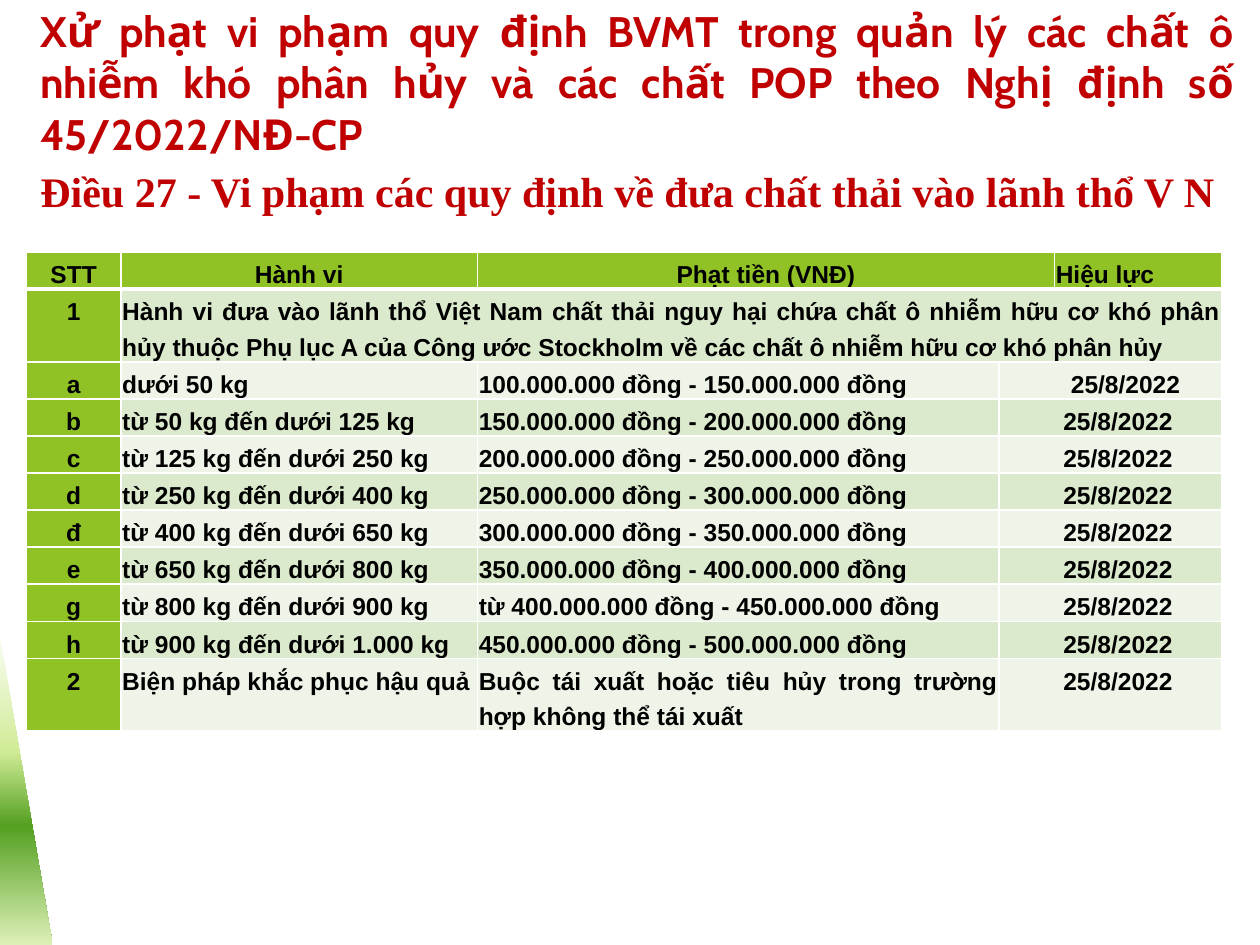
from dataclasses import dataclass

from lxml import etree
from pptx import Presentation
from pptx.dml.color import RGBColor
from pptx.enum.shapes import MSO_SHAPE
from pptx.enum.text import MSO_ANCHOR, MSO_AUTO_SIZE, PP_ALIGN
from pptx.oxml.ns import qn
from pptx.util import Inches, Pt

RIGHT_TRIANGLE = MSO_SHAPE.RIGHT_TRIANGLE
TOP, MIDDLE = MSO_ANCHOR.TOP, MSO_ANCHOR.MIDDLE
NO_AUTOFIT = MSO_AUTO_SIZE.NONE
LEFT, CENTER, JUSTIFY = PP_ALIGN.LEFT, PP_ALIGN.CENTER, PP_ALIGN.JUSTIFY


@dataclass(frozen=True)
class Theme:
    heading: str = "C00000"
    ink: str = "000000"
    line: str = "FFFFFF"
    accent: str = "90C226"
    bands: tuple = ("DBE9CD", "EEF4E8")
    fade: tuple = ((0, "FAFDF3"), (37, "D0EB96"), (61, "54A021"), (100, "DFF1B9"))
    decree_font: str = "Cabin"
    article_font: str = "Times New Roman"
    table_font: str = "Arial"
    decree_size: float = 24.4
    article_size: float = 24
    table_size: float = 14


class SlideBuilder:
    def __init__(self, slide, theme):
        self.slide = slide
        self.theme = theme

    def fill_text(self, frame, text, font_name, size, color, align, spacing=1.0):
        frame.text = text
        frame.word_wrap = True
        paragraph = frame.paragraphs[0]
        paragraph.alignment = align
        paragraph.line_spacing = spacing
        font = paragraph.runs[0].font
        font.name = font_name
        font.size = Pt(size)
        font.bold = True
        font.color.rgb = RGBColor.from_string(color)
        return paragraph

    def title(self, text, left, top, width, height):
        title = self.slide.shapes.title
        title.left, title.top = Inches(left), Inches(top)
        title.width, title.height = Inches(width), Inches(height)
        frame = title.text_frame
        frame.auto_size = NO_AUTOFIT
        frame.vertical_anchor = MIDDLE
        self.fill_text(frame, text, self.theme.article_font, self.theme.article_size,
                       self.theme.heading, LEFT, 0.9)

    def text(self, text, left, top, width, height):
        box = self.slide.shapes.add_textbox(
            Inches(left), Inches(top), Inches(width), Inches(height))
        box.text_frame.vertical_anchor = TOP
        self.fill_text(box.text_frame, text, self.theme.decree_font,
                       self.theme.decree_size, self.theme.heading, JUSTIFY)

    def corner(self, left, top, width, height):
        corner = self.slide.shapes.add_shape(
            RIGHT_TRIANGLE, Inches(left), Inches(top), Inches(width), Inches(height))
        corner.shadow.inherit = False
        corner.line.fill.background()
        corner.fill.gradient()
        corner.fill.gradient_angle = 270
        stops = corner.element.spPr.find(qn("a:gradFill")).find(qn("a:gsLst"))
        for stop in list(stops):
            stops.remove(stop)
        for percent, color in self.theme.fade:
            stop = etree.SubElement(stops, qn("a:gs"), pos=str(percent * 1000))
            etree.SubElement(stop, qn("a:srgbClr"), val=color)

    def table(self, left, top, widths, heights):
        frame = self.slide.shapes.add_table(
            len(heights), len(widths), Inches(left), Inches(top),
            Inches(sum(widths)), Inches(sum(heights)))
        table = frame.table
        for column, width in zip(table.columns, widths):
            column.width = Inches(width)
        for row, height in zip(table.rows, heights):
            row.height = Inches(height)
        for index, row in enumerate(table.rows):
            band = self.theme.bands[(index - 1) % 2]
            for column, cell in enumerate(row.cells):
                is_accent = index == 0 or column == 0
                self.borders(cell, top=3 if index == 1 else 1,
                             bottom=3 if index == 0 else 1)
                cell.fill.solid()
                cell.fill.fore_color.rgb = RGBColor.from_string(
                    self.theme.accent if is_accent else band)
        return table

    def borders(self, cell, top, bottom):
        properties = cell._tc.get_or_add_tcPr()
        for side, points in (("L", 1), ("R", 1), ("T", top), ("B", bottom)):
            edge = etree.SubElement(properties, qn(f"a:ln{side}"), w=str(Pt(points)))
            fill = etree.SubElement(edge, qn("a:solidFill"))
            etree.SubElement(fill, qn("a:srgbClr"), val=self.theme.line)

    def cell(self, table, row, column, text, align, span=1, indent=0):
        cell = table.cell(row, column)
        if span > 1:
            cell.merge(table.cell(row, column + span - 1))
        cell.margin_left = cell.margin_right = cell.margin_top = Inches(0.01)
        cell.margin_bottom = 0
        paragraph = self.fill_text(cell.text_frame, text, self.theme.table_font,
                                   self.theme.table_size, self.theme.ink, align, 1.3)
        if indent:
            paragraph._p.get_or_add_pPr().set("indent", str(Inches(indent)))


DECREE = ("Xử phạt vi phạm quy định BVMT trong quản lý các chất ô nhiễm khó phân hủy "
          "và các chất POP theo Nghị định số 45/2022/NĐ-CP")
ARTICLE = "Điều 27 - Vi phạm các quy định về đưa chất thải vào lãnh thổ V N"
VIOLATION = ("Hành vi đưa vào lãnh thổ Việt Nam chất thải nguy hại chứa chất ô nhiễm hữu cơ "
             "khó phân hủy thuộc Phụ lục A của Công ước Stockholm về các chất ô nhiễm hữu cơ "
             "khó phân hủy")
EFFECTIVE_DATE = "25/8/2022"
PENALTIES = [
    ("a", "dưới 50 kg", "100.000.000 đồng - 150.000.000 đồng"),
    ("b", "từ 50 kg đến dưới 125 kg", "150.000.000 đồng - 200.000.000 đồng"),
    ("c", "từ 125 kg đến dưới 250 kg", "200.000.000 đồng - 250.000.000 đồng"),
    ("d", "từ 250 kg đến dưới 400 kg", "250.000.000 đồng - 300.000.000 đồng"),
    ("đ", "từ 400 kg đến dưới 650 kg", "300.000.000 đồng - 350.000.000 đồng"),
    ("e", "từ 650 kg đến dưới 800 kg", "350.000.000 đồng - 400.000.000 đồng"),
    ("g", "từ 800 kg đến dưới 900 kg", "từ 400.000.000 đồng - 450.000.000 đồng"),
    ("h", "từ 900 kg đến dưới 1.000 kg", "450.000.000 đồng - 500.000.000 đồng"),
    ("2", "Biện pháp khắc phục hậu quả",
     "Buộc tái xuất hoặc tiêu hủy trong trường hợp không thể tái xuất"),
]
COLUMN_WIDTHS = [0.75, 2.83, 4.14, 0.44, 1.33]
SINGLE, DOUBLE = 0.29, 0.57
ROW_HEIGHTS = [SINGLE, DOUBLE] + [SINGLE] * 8 + [DOUBLE]


def main():
    presentation = Presentation()
    presentation.slide_width = Inches(10)
    presentation.slide_height = Inches(7.5)
    slide = presentation.slides.add_slide(presentation.slide_layouts[5])
    builder = SlideBuilder(slide, Theme())

    builder.corner(0, 5.06, 0.42, 2.45)
    builder.title(ARTICLE, 0.22, 1.23, 9.92, 0.61)

    penalties = builder.table(0.21, 2, COLUMN_WIDTHS, ROW_HEIGHTS)
    builder.cell(penalties, 0, 0, "STT", CENTER)
    builder.cell(penalties, 0, 1, "Hành vi", CENTER)
    builder.cell(penalties, 0, 2, "Phạt tiền (VNĐ)", CENTER, span=2)
    builder.cell(penalties, 0, 4, "Hiệu lực", JUSTIFY)
    builder.cell(penalties, 1, 0, "1", CENTER)
    builder.cell(penalties, 1, 1, VIOLATION, JUSTIFY, span=4)
    for row, (item, conduct, fine) in enumerate(PENALTIES, start=2):
        date_indent = 0.56 if item == "a" else 0.5
        builder.cell(penalties, row, 0, item, CENTER)
        builder.cell(penalties, row, 1, conduct, JUSTIFY)
        builder.cell(penalties, row, 2, fine, JUSTIFY)
        builder.cell(penalties, row, 3, EFFECTIVE_DATE, JUSTIFY, span=2, indent=date_indent)

    builder.text(DECREE, 0.22, -0.01, 9.67, 1.25)
    presentation.save("out.pptx")


if __name__ == "__main__":
    main()
